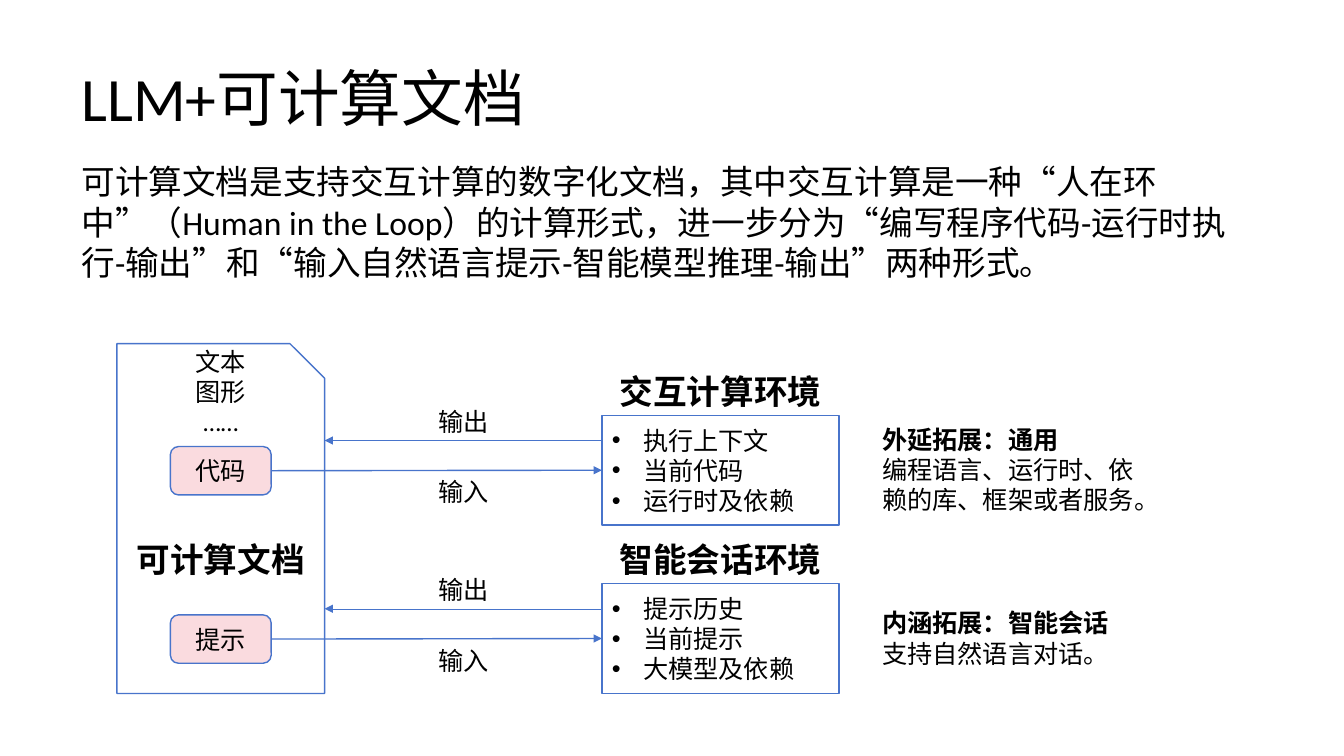
import pptx
import pptx.util
import pptx.dml.color
import pptx.enum.shapes
import pptx.enum.text
import pptx.oxml.ns
import lxml.etree

SHAPES = pptx.enum.shapes.MSO_SHAPE
ALIGN = pptx.enum.text.PP_ALIGN
ANCHOR = pptx.enum.text.MSO_ANCHOR
inch = pptx.util.Inches
qn = pptx.oxml.ns.qn

BLUE, PINK, WHITE, BLACK = "4874CB", "FADBDF", "FFFFFF", "000000"
LATIN, CHINESE = "Calibri", "Noto Sans CJK SC"

# Columns of the grid: left edge and width, in inches
COLUMNS = {
    "title": (0.71, 11.5),
    "intro": (0.71, 11.82),
    "document": (1.16, 2.06),
    "cell": (1.69, 1.0),
    "arrow label": (4.25, 0.71),
    "environment": (5.97, 2.35),
    "remark": (8.65, 2.83),
}

# The two lanes share one layout and start at these heights
LANE_TOP, LANE_STEP = 4.12, 1.67
LANES = [
    {
        "cell": "代码",
        "heading": "交互计算环境",
        "items": ["执行上下文", "当前代码", "运行时及依赖"],
        "remark": ["外延拓展：通用", "编程语言、运行时、依赖的库、框架或者服务。"],
        "remark row": (0.04, 1.01),
        "output width": 0.5,
    },
    {
        "cell": "提示",
        "heading": "智能会话环境",
        "items": ["提示历史", "当前提示", "大模型及依赖"],
        "remark": ["内涵拓展：智能会话", "支持自然语言对话。"],
        "remark row": (0.19, 0.71),
        "output width": 0.25,
    },
]


def color(value):
    return pptx.dml.color.RGBColor.from_string(value)


def place(column, top, height):
    left, width = COLUMNS[column]
    return [inch(length) for length in (left, top, width, height)]


def add_bullet(paragraph):
    properties = paragraph._p.get_or_add_pPr()
    properties.set("marL", str(inch(0.31)))
    properties.set("indent", str(inch(-0.31)))
    lxml.etree.SubElement(properties, qn("a:buFont"), typeface="Arial")
    lxml.etree.SubElement(properties, qn("a:buChar"), char="•")


def write(frame, lines, size=18, align=ALIGN.LEFT, bold_lines=0,
          bullets=False, latin=LATIN, spacing=None):
    for number, line in enumerate(lines):
        paragraph = frame.paragraphs[0] if number == 0 else frame.add_paragraph()
        if bullets:
            add_bullet(paragraph)
        paragraph.alignment = align
        if spacing:
            paragraph.line_spacing = spacing
        run = paragraph.add_run()
        run.text = line
        styles = {"size": pptx.util.Pt(size), "bold": number < bold_lines,
                  "name": latin}
        for name, value in styles.items():
            setattr(run.font, name, value)
        run.font.color.rgb = color(BLACK)
        properties = run._r.get_or_add_rPr()
        properties.set("lang", "zh-CN")
        lxml.etree.SubElement(properties, qn("a:ea"), typeface=CHINESE)


def add_text(slide, position, lines, anchor=ANCHOR.TOP, wrap=True, **style):
    frame = slide.shapes.add_textbox(*position).text_frame
    frame.word_wrap = wrap
    frame.vertical_anchor = anchor
    write(frame, lines, **style)


def add_box(slide, kind, position, fill, lines=(), **style):
    box = slide.shapes.add_shape(kind, *position)
    box.shadow.inherit = False
    box.fill.solid()
    box.fill.fore_color.rgb = color(fill)
    box.line.color.rgb = color(BLUE)
    box.line.width = pptx.util.Pt(1)
    box.text_frame.vertical_anchor = ANCHOR.MIDDLE
    write(box.text_frame, lines, **style)
    return box


def add_arrow(slide, start, end, width):
    arrow = slide.shapes.add_connector(
        pptx.enum.shapes.MSO_CONNECTOR.STRAIGHT,
        *[inch(length) for length in (*start, *end)])
    arrow.line.color.rgb = color(BLUE)
    arrow.line.width = pptx.util.Pt(width)
    lxml.etree.SubElement(arrow.line._get_or_add_ln(), qn("a:tailEnd"),
                          type="triangle")
    lxml.etree.SubElement(arrow._element.spPr, qn("a:effectLst"))
    return arrow


def add_document(slide):
    add_box(slide, SHAPES.SNIP_1_RECTANGLE, place("document", 3.41, 3.47), WHITE)
    add_text(slide, place("document", 3.45, 0.87), ["文本", "图形", "……"],
             anchor=ANCHOR.MIDDLE, align=ALIGN.CENTER)
    add_text(slide, place("document", 5.3, 0.5), ["可计算文档"],
             size=24, align=ALIGN.CENTER, bold_lines=1)


def add_lane(slide, lane, top):
    # Cell in the document and the environment that runs it
    cell = add_box(slide, SHAPES.ROUNDED_RECTANGLE, place("cell", top + 0.31, 0.48),
                   PINK, [lane["cell"]], align=ALIGN.CENTER)
    environment = add_box(slide, SHAPES.RECTANGLE, place("environment", top, 1.09),
                          WHITE, lane["items"], bullets=True)
    add_text(slide, place("environment", top - 0.49, 0.5), [lane["heading"]],
             size=24, align=ALIGN.CENTER, bold_lines=1)

    # Input and output arrows with their labels
    document_right = sum(COLUMNS["document"])
    environment_left = COLUMNS["environment"][0]
    middle, output = top + 0.55, top + 0.25
    entry = add_arrow(slide, (sum(COLUMNS["cell"]), middle),
                      (environment_left, middle), 1)
    entry.begin_connect(cell, 3)
    entry.end_connect(environment, 1)
    add_arrow(slide, (environment_left, output), (document_right, output),
              lane["output width"])
    for label, offset in (("输出", -0.14), ("输入", 0.56)):
        add_text(slide, place("arrow label", top + offset, 0.4), [label], wrap=False)

    # Remark on the right
    offset, height = lane["remark row"]
    add_text(slide, place("remark", top + offset, height), lane["remark"],
             bold_lines=1, latin=CHINESE)


def main():
    deck = pptx.Presentation()
    deck.slide_width, deck.slide_height = inch(13.33), inch(7.5)
    slide = deck.slides.add_slide(deck.slide_layouts[6])

    # Title and introduction
    add_text(slide, place("title", 0.28, 1.45), ["LLM+可计算文档"],
             anchor=ANCHOR.MIDDLE, size=44, spacing=0.9)
    add_text(slide, place("intro", 1.55, 1.31), [
        "可计算文档是支持交互计算的数字化文档，其中交互计算是一种“人在环中”"
        "（Human in the Loop）的计算形式，进一步分为“编写程序代码-运行时执行-输出”"
        "和“输入自然语言提示-智能模型推理-输出”两种形式。"], size=24)

    # Diagram
    add_document(slide)
    for number, lane in enumerate(LANES):
        add_lane(slide, lane, LANE_TOP + number * LANE_STEP)

    deck.save("out.pptx")


if __name__ == "__main__":
    main()
